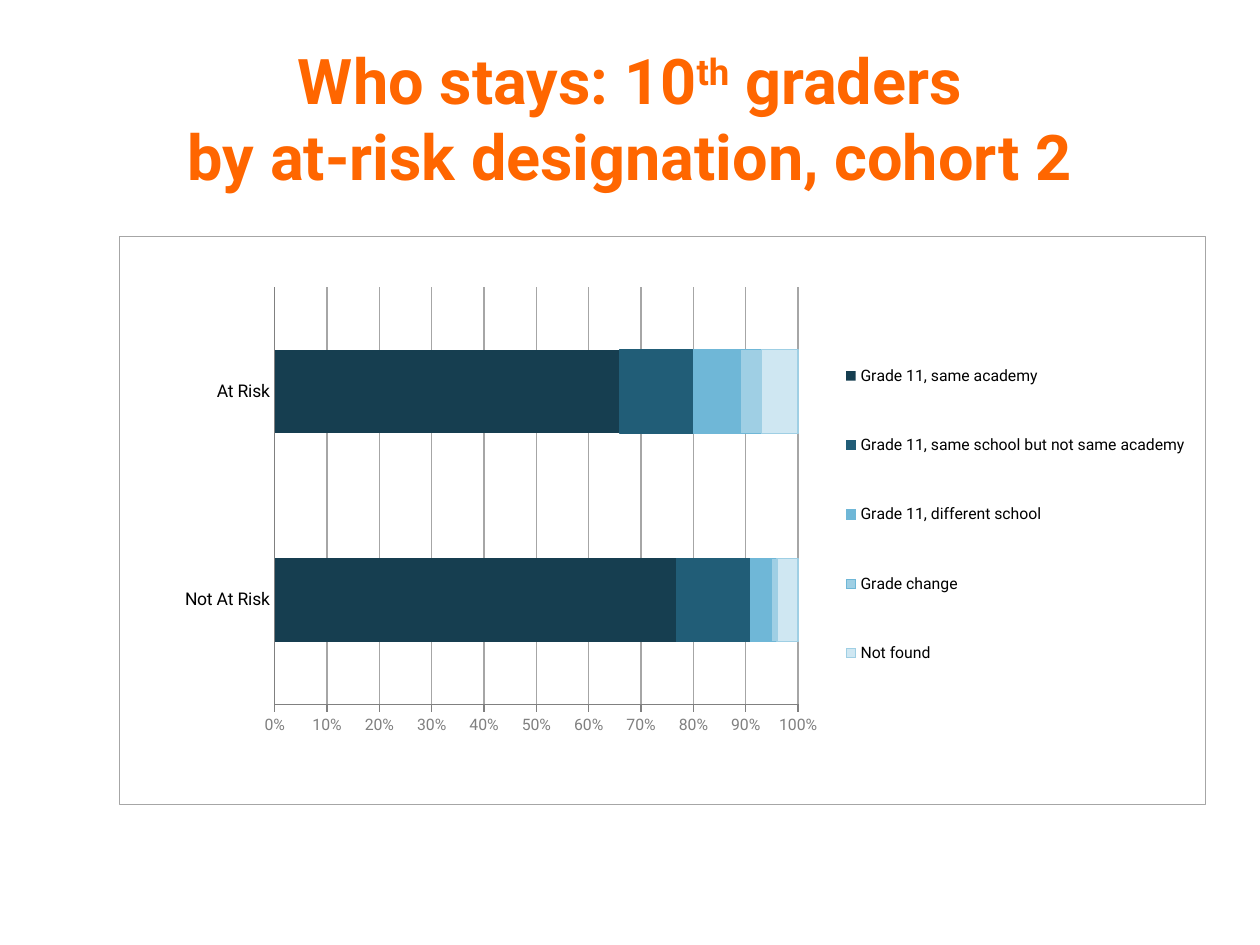
from dataclasses import dataclass

from lxml.etree import SubElement
from pptx import Presentation
from pptx.chart.data import CategoryChartData
from pptx.dml.color import RGBColor
from pptx.enum.chart import XL_CHART_TYPE as ChartType
from pptx.enum.chart import XL_LEGEND_POSITION as LegendPosition
from pptx.enum.chart import XL_TICK_MARK as TickMark
from pptx.enum.text import MSO_ANCHOR as Anchor
from pptx.enum.text import PP_ALIGN as Align
from pptx.oxml import parse_xml
from pptx.oxml.ns import nsdecls, qn
from pptx.util import Pt


@dataclass(frozen=True)
class Theme:
    font: str = "Roboto"
    title: str = "FF6600"
    text: str = "000000"
    muted: str = "808080"
    rule: str = "A6A6A6"
    title_size: int = 36
    label_size: int = 10
    small_size: int = 9
    line_width: float = 0.75


THEME = Theme()
CATEGORIES = ["Not At Risk", "At Risk"]
# name, values, fill colour, line colour
SERIES = [
    ("Grade 11, same academy", (76, 66), "163E50", None),
    ("Grade 11, same school but not same academy", (14, 14), "215D77", "215D77"),
    ("Grade 11, different school", (4, 9), "6FB7D7", "6FB7D7"),
    ("Grade change", (1, 4), "9FCFE4", "6FB7D7"),
    ("Not found", (4, 7), "CFE7F2", "9FCFE4"),
]


def style_font(font, size, color, bold=False):
    formats = {"name": THEME.font, "size": Pt(size), "bold": bold}
    for attribute, value in formats.items():
        setattr(font, attribute, value)
    font.color.rgb = RGBColor.from_string(color)


def style_line(line, color):
    line.color.rgb = RGBColor.from_string(color)
    line.width = Pt(THEME.line_width)


def add_title(slide):
    box = slide.shapes.add_textbox(Pt(43.2), Pt(8.64), Pt(633.6), Pt(105.12))
    frame = box.text_frame
    frame.word_wrap = True
    frame.vertical_anchor = Anchor.BOTTOM
    paragraph = frame.paragraphs[0]
    paragraph.alignment = Align.CENTER

    def add_run(text):
        run = paragraph.add_run()
        run.text = text
        style_font(run.font, THEME.title_size, THEME.title, bold=True)
        return run

    add_run("Who stays: 10")
    add_run("th")._r.get_or_add_rPr().set("baseline", "30000")
    add_run(" graders")
    paragraph.add_line_break()
    add_run("by at-risk designation, cohort 2")


def set_layout(parent, index, bounds, inner=False):
    """Place a chart part by x, y, width and height as fractions of the chart."""
    for old in parent.findall(qn("c:layout")):
        parent.remove(old)
    layout = parse_xml(f"<c:layout {nsdecls('c')}><c:manualLayout/></c:layout>")
    values = [("layoutTarget", "inner")] if inner else []
    values += [("xMode", "edge"), ("yMode", "edge"), *zip("xywh", bounds)]
    for tag, value in values:
        SubElement(layout[0], qn(f"c:{tag}")).set("val", str(value))
    parent.insert(index, layout)


def add_border(chart):
    border = parse_xml(
        f"<c:spPr {nsdecls('c', 'a')}><a:noFill/>"
        f'<a:ln w="{Pt(THEME.line_width)}"><a:solidFill>'
        f'<a:srgbClr val="{THEME.rule}"/></a:solidFill></a:ln></c:spPr>'
    )
    chart.element.find(qn("c:chart")).addnext(border)


def style_axes(chart):
    category_axis, value_axis = chart.category_axis, chart.value_axis
    category_axis.major_tick_mark = TickMark.NONE
    style_font(category_axis.tick_labels.font, THEME.label_size, THEME.text)
    value_axis.major_tick_mark = TickMark.OUTSIDE
    scale = {"minimum_scale": 0, "maximum_scale": 1, "major_unit": 0.1}
    for attribute, value in scale.items():
        setattr(value_axis, attribute, value)
    labels = value_axis.tick_labels
    labels.number_format = "0%"
    labels.number_format_is_linked = False
    style_font(labels.font, THEME.small_size, THEME.muted)
    style_line(value_axis.major_gridlines.format.line, THEME.rule)
    for axis in (category_axis, value_axis):
        style_line(axis.format.line, THEME.muted)


def style_bars(plot):
    plot.gap_width = 150
    plot.overlap = 100
    plot.vary_by_categories = False
    for series, (_, _, fill, line) in zip(plot.series, SERIES):
        series.format.fill.solid()
        series.format.fill.fore_color.rgb = RGBColor.from_string(fill)
        if line:
            style_line(series.format.line, line)
        else:
            series.format.line.fill.background()


def style_legend(chart):
    chart.has_legend = True
    legend = chart.legend
    legend.position = LegendPosition.RIGHT
    legend.include_in_layout = False
    style_font(legend.font, THEME.small_size, THEME.text)
    set_layout(legend._element, 1, (0.66, 0.14, 0.33, 0.7))


def add_retention_chart(slide):
    data = CategoryChartData()
    data.categories = CATEGORIES
    for name, values, _, _ in SERIES:
        data.add_series(name, values)
    chart = slide.shapes.add_chart(
        ChartType.BAR_STACKED_100, Pt(67.9), Pt(134.6), Pt(621.2), Pt(325.4), data
    ).chart
    chart.has_title = False
    style_font(chart.font, THEME.label_size, THEME.text)
    style_axes(chart)
    style_bars(chart.plots[0])
    style_legend(chart)
    plot_area = chart.element.find(qn("c:chart")).find(qn("c:plotArea"))
    set_layout(plot_area, 0, (0.143, 0.09, 0.482, 0.734), inner=True)
    add_border(chart)


def main():
    presentation = Presentation()
    presentation.slide_width, presentation.slide_height = Pt(720), Pt(540)
    slide = presentation.slides.add_slide(presentation.slide_layouts[6])
    add_title(slide)
    add_retention_chart(slide)
    presentation.save("out.pptx")


if __name__ == "__main__":
    main()
